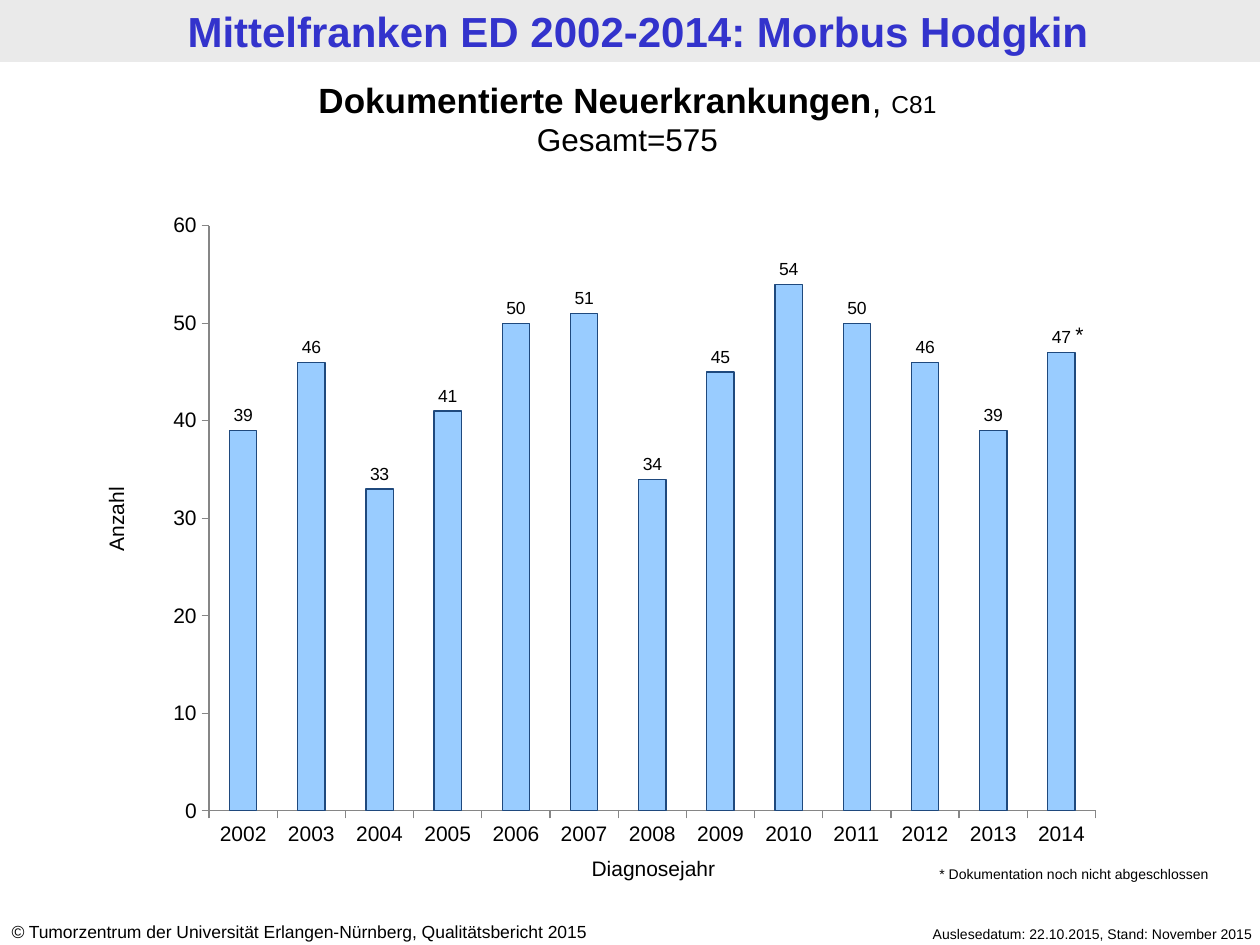
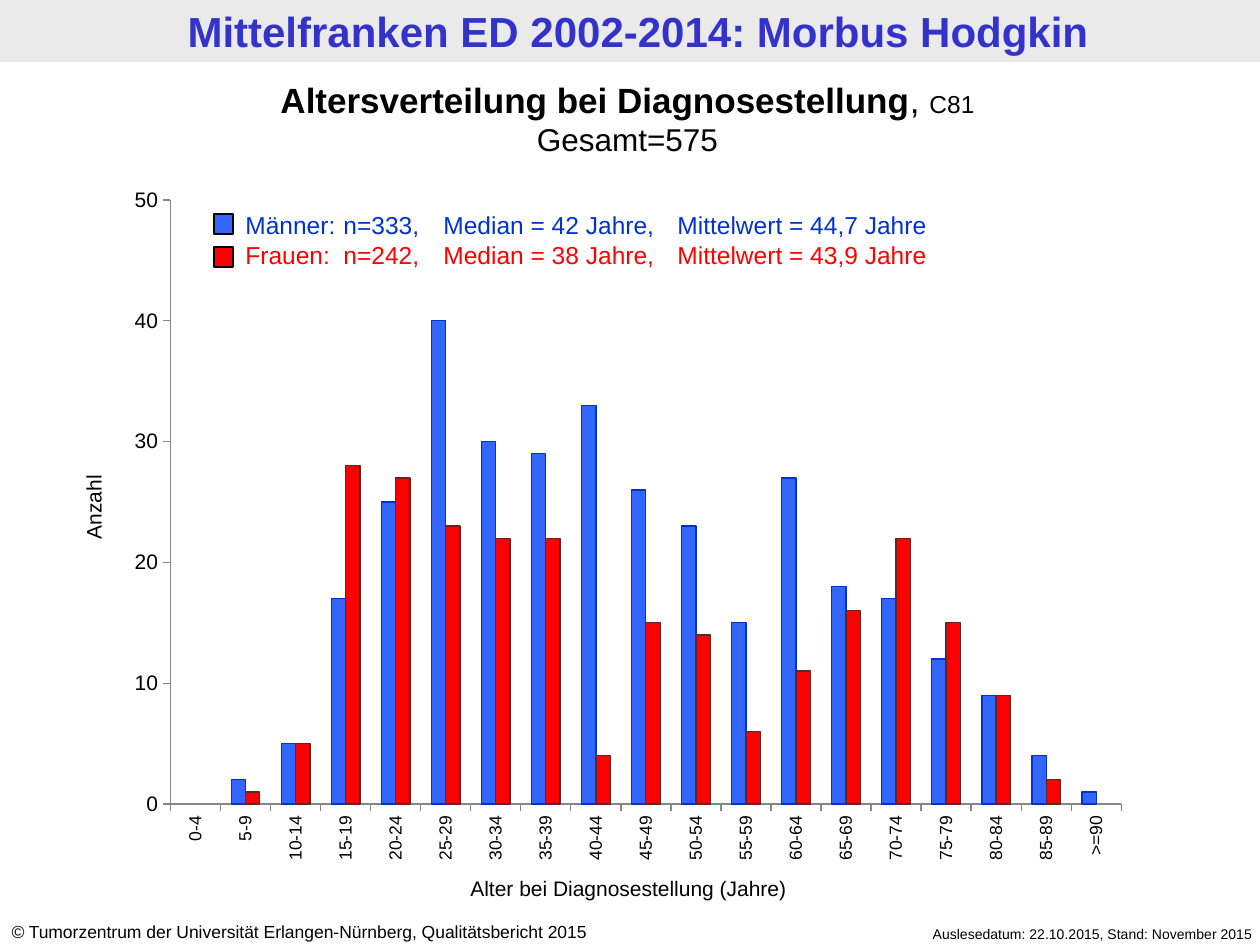
"""Build two slides on Hodgkin diagnoses: new cases by year and age at diagnosis."""
from dataclasses import dataclass

from lxml.etree import SubElement
from pptx import Presentation
from pptx.chart.data import CategoryChartData as Data
from pptx.dml.color import RGBColor as Rgb
from pptx.enum.chart import XL_CHART_TYPE as Kind, XL_LABEL_POSITION as Spot, XL_TICK_MARK as Tick
from pptx.enum.shapes import MSO_SHAPE as Form
from pptx.enum.text import PP_ALIGN as Align
from pptx.oxml import parse_xml
from pptx.oxml.ns import nsdecls, qn
from pptx.util import Pt


@dataclass(frozen=True)
class Theme:
    """Colours, font and type sizes."""
    font: str = "Arial"
    ink: str = "000000"
    head: str = "3333CC"
    band: str = "EAEAEA"
    axis: str = "868686"
    sky: str = "99CCFF"
    navy: str = "1F497D"
    blue: str = "3366FF"
    deep: str = "0033CC"
    red: str = "FF0000"
    wine: str = "632523"
    title: int = 24
    topic: int = 20
    total: int = 18
    key: int = 14
    label: int = 12
    small: int = 10
    note: int = 8


T = Theme()
EMU = 914400 / 126
LEFT, MID, RIGHT = Align.LEFT, Align.CENTER, Align.RIGHT

TITLE = "Mittelfranken ED 2002-2014: Morbus Hodgkin"
STAND = "Auslesedatum: 22.10.2015, Stand: November 2015"
OWNER = " Tumorzentrum der Universität Erlangen-Nürnberg, Qualitätsbericht 2015"
CODE, TOTAL = "C81", "Gesamt=575"

CASES = dict(
    topic="Dokumentierte Neuerkrankungen",
    box=(145, 207, 971, 648), plot=(209, 226, 887, 585), top=60,
    cats=[str(year) for year in range(2002, 2015)], size=T.label, turn=False,
    rows=[([39, 46, 33, 41, 50, 51, 34, 45, 54, 50, 46, 39, 47], T.sky, T.navy)],
    labels=True,
    xname=("Diagnosejahr", (512, 849, 283, 38)), yname=(39, 500, 154, 38))

AGES = dict(
    topic="Altersverteilung bei Diagnosestellung",
    box=(115, 175, 1028, 699), plot=(171, 200, 951, 604), top=50,
    cats=[f"{age}-{age + 4}" for age in range(0, 90, 5)] + [">=90"],
    size=T.small, turn=True,
    rows=[([None, 2, 5, 17, 25, 40, 30, 29, 33, 26, 23, 15, 27, 18, 17, 12, 9, 4, 1],
           T.blue, T.deep),
          ([None, 1, 5, 28, 27, 23, 22, 22, 4, 15, 14, 6, 11, 16, 22, 15, 9, 2, None],
           T.red, T.wine)],
    labels=False,
    xname=("Alter bei Diagnosestellung (Jahre)", (435, 869, 387, 38)),
    yname=(-71, 488, 329, 38))

KEYS = [
    (("Männer:", "n=333,", "Median = 42 Jahre,", "Mittelwert = 44,7 Jahre"), T.blue, T.deep),
    (("Frauen:", "n=242,", "Median = 38 Jahre,", "Mittelwert = 43,9 Jahre"), T.red, T.red)]
STOPS = (98, 198, 432)


def px(*nums):
    """Turn pixels into EMU."""
    return [round(num * EMU) for num in nums]


def style(font, size, tint=T.ink, bold=False, slant=False):
    """Set the look of a font."""
    font.name, font.size = T.font, Pt(size)
    font.bold, font.italic = bold, slant
    font.color.rgb = Rgb.from_string(tint)


def ink(line, tint):
    """Colour a thin line."""
    line.color.rgb = Rgb.from_string(tint)
    line.width = Pt(0.75)


def text(slide, box, paras, align=LEFT, stops=(), turn=0):
    """Add a text box from paragraphs of (text, *style) runs."""
    shape = slide.shapes.add_textbox(*px(*box))
    shape.rotation = turn
    frame = shape.text_frame
    frame.word_wrap = True
    for num, runs in enumerate(paras):
        para = frame.add_paragraph() if num else frame.paragraphs[0]
        para.alignment = align
        if stops:
            tabs = SubElement(para._p.get_or_add_pPr(), qn("a:tabLst"))
            for stop in px(*stops):
                SubElement(tabs, qn("a:tab"), pos=str(stop), algn="l")
        for words, *look in runs:
            run = para.add_run()
            run.text = words
            style(run.font, *look)
    return frame


def rect(slide, box, tint, edge=None):
    """Add a flat rectangle."""
    shape = slide.shapes.add_shape(Form.RECTANGLE, *px(*box))
    shape.shadow.inherit = False
    shape.fill.solid()
    shape.fill.fore_color.rgb = Rgb.from_string(tint)
    if edge:
        ink(shape.line, edge)
    else:
        shape.line.fill.background()


def place(chart, box, plot):
    """Fix the inner plot area inside the chart frame."""
    left, top, wide, high = box
    parts = dict(x=(plot[0] - left) / wide, y=(plot[1] - top) / high,
                 w=plot[2] / wide, h=plot[3] / high)
    marks = "".join(f'<c:{way}Mode val="edge"/>' for way in "xy")
    marks += "".join(f'<c:{key} val="{val:.3f}"/>' for key, val in parts.items())
    area = chart._chartSpace.chart.plotArea
    for old in area.findall(qn("c:layout")):
        area.remove(old)
    area.insert(0, parse_xml(
        f'<c:layout {nsdecls("c")}><c:manualLayout><c:layoutTarget val="inner"/>'
        f'{marks}</c:manualLayout></c:layout>'))


def bars(slide, page):
    """Add the column chart of a page."""
    data = Data()
    data.categories = page["cats"]
    for num, (vals, _, _) in enumerate(page["rows"], 1):
        data.add_series(f"Series {num}", vals)
    chart = slide.shapes.add_chart(Kind.COLUMN_CLUSTERED, *px(*page["box"]), data).chart
    chart.has_legend = chart.has_title = False
    style(chart.font, T.label)
    place(chart, page["box"], page["plot"])
    plot = chart.plots[0]
    plot.vary_by_categories = False
    plot.gap_width, plot.overlap = 150, 0
    for row, (_, fill, edge) in zip(plot.series, page["rows"]):
        row.invert_if_negative = False
        row.format.fill.solid()
        row.format.fill.fore_color.rgb = Rgb.from_string(fill)
        ink(row.format.line, edge)
    if page["labels"]:
        plot.has_data_labels = True
        plot.data_labels.show_value = True
        plot.data_labels.position = Spot.OUTSIDE_END
        style(plot.data_labels.font, T.small)
    cat, val = chart.category_axis, chart.value_axis
    for axis, size in ((cat, page["size"]), (val, T.label)):
        axis.has_major_gridlines = False
        axis.major_tick_mark, axis.minor_tick_mark = Tick.OUTSIDE, Tick.NONE
        ink(axis.format.line, T.axis)
        style(axis.tick_labels.font, size)
    val.minimum_scale, val.maximum_scale, val.major_unit = 0, page["top"], 10
    if page["turn"]:
        cat._element.find(qn("c:txPr")).find(qn("a:bodyPr")).set("rot", "-5400000")


def base(deck, page):
    """Add a slide with band, footers, headings, chart and axis names."""
    slide = deck.slides.add_slide(deck.slide_layouts[6])
    rect(slide, (0, 0, 1260, 62), T.band)
    frame = text(slide, (8, 1, 1260, 62), [[(TITLE, T.title, T.head, True)]], MID)
    frame.margin_top = frame.margin_bottom = px(5)[0]
    text(slide, (838, 919, 427, 30), [[(STAND, T.note)]], RIGHT)
    text(slide, (-1, 915, 660, 34),
         [[("©", T.small, T.ink, False, True), (OWNER, T.small)]])
    bars(slide, page)
    text(slide, (-5, 72, 1265, 93),
         [[(page["topic"], T.topic, T.ink, True), (", ", T.topic), (CODE, T.key)],
          [(TOTAL, T.total)]], MID)
    name, box = page["xname"]
    text(slide, box, [[(name, T.label)]], MID)
    text(slide, page["yname"], [[("Anzahl", T.label)]], MID, turn=270)
    return slide


def main():
    """Build and save the deck."""
    deck = Presentation()
    deck.slide_width, deck.slide_height = px(1260, 945)
    slide = base(deck, CASES)
    text(slide, (1047, 315, 49, 38), [[("*", T.label)]], RIGHT)
    text(slide, (927, 859, 312, 30),
         [[("* Dokumentation noch nicht abgeschlossen", T.note)]])
    slide = base(deck, AGES)
    text(slide, (233, 204, 863, 72),
         [[("\t".join(parts), T.key, tint)] for parts, _, tint in KEYS], stops=STOPS)
    for num, (_, fill, _) in enumerate(KEYS):
        rect(slide, (214, 214 + 33 * num, 19, 20), fill, T.ink)
    deck.save("out.pptx")


if __name__ == "__main__":
    main()
